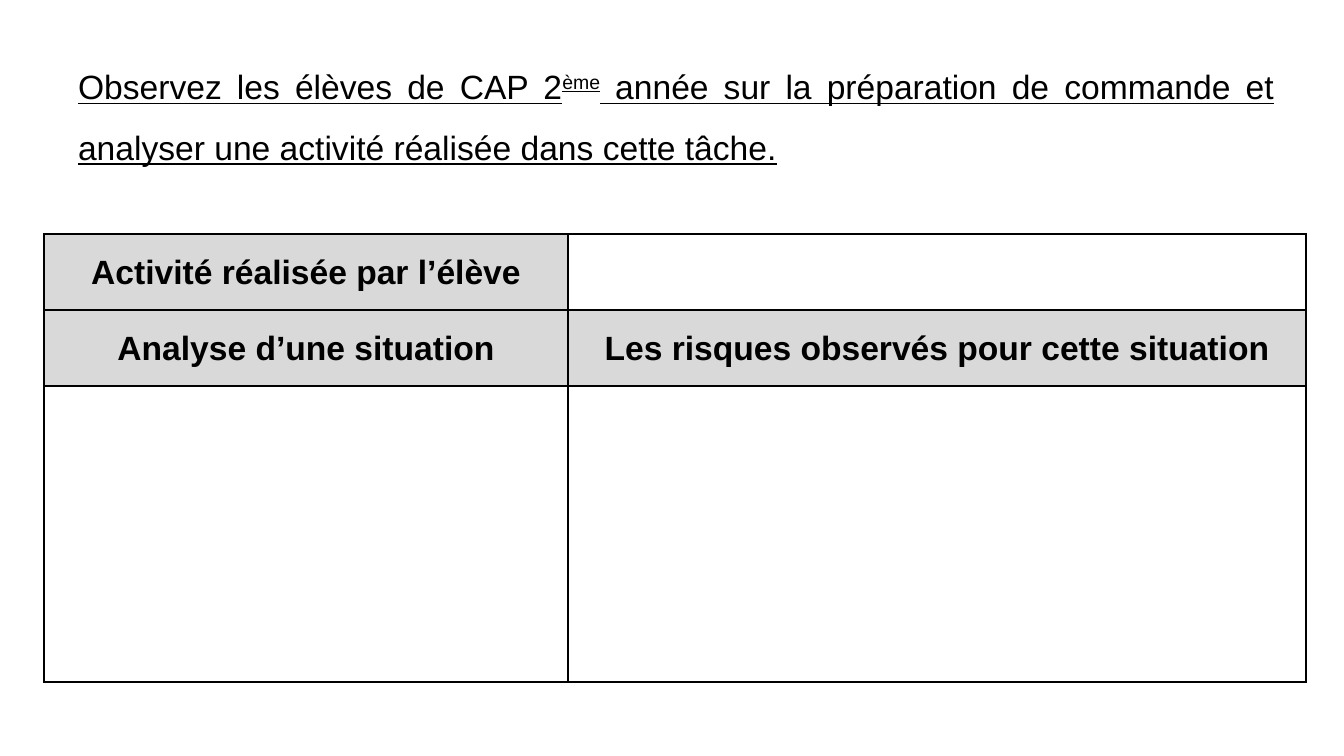
"""Build the worksheet slide on observing a pupil's activity and its risks."""
from lxml import etree
from pptx import Presentation
from pptx import util as u
from pptx.dml.color import RGBColor
from pptx.enum import text
from pptx.oxml.ns import qn

PX = 914400 / 100.8
COLORS = {"ink": "000000", "heading": "D9D9D9"}
INSTRUCTION = [
    ("Observez les élèves de CAP 2", 0),
    ("ème", 30),
    (" année sur la préparation de commande et analyser une activité réalisée dans cette tâche.", 0),
]
HEADINGS = [
    ["Activité réalisée par l’élève", ""],
    ["Analyse d’une situation", "Les risques observés pour cette situation"],
    ["", ""],
]
COLUMN_WIDTHS = [524, 738]
ROW_HEIGHTS = [76, 76, 296]


def px(length):
    return u.Emu(round(length * PX))


def color(name):
    return RGBColor.from_string(COLORS[name])


def write(paragraph, words, bold=False, underline=False, raised=0):
    run = paragraph.add_run()
    run.text = words
    run.font.name = "Arial"
    run.font.size = u.Pt(24)
    run.font.bold = bold
    run.font.underline = underline
    run.font.color.rgb = color("ink")
    if raised:
        run.font._element.set("baseline", str(raised * 1000))


def space(paragraph, align, line_spacing):
    paragraph.alignment = align
    paragraph.line_spacing = line_spacing
    paragraph.space_after = u.Pt(8)


def add_instruction(slide):
    instruction = slide.shapes.title
    instruction.left, instruction.top = px(68), px(41)
    instruction.width, instruction.height = px(1216), px(126)
    frame = instruction.text_frame
    frame.word_wrap = True
    frame.auto_size = text.MSO_AUTO_SIZE.SHAPE_TO_FIT_TEXT
    frame.vertical_anchor = text.MSO_ANCHOR.TOP
    sentence = frame.paragraphs[0]
    space(sentence, text.PP_ALIGN.JUSTIFY, 1.5)
    for words, raised in INSTRUCTION:
        write(sentence, words, underline=True, raised=raised)


def outline(cell):
    properties = cell._tc.get_or_add_tcPr()
    for side in ("a:lnL", "a:lnR", "a:lnT", "a:lnB"):
        border = etree.SubElement(properties, qn(side), w=str(u.Pt(1)))
        fill = etree.SubElement(border, qn("a:solidFill"))
        etree.SubElement(fill, qn("a:srgbClr"), val=COLORS["ink"])


def fill_cell(cell, heading):
    outline(cell)
    if not heading:
        cell.fill.background()
        return
    cell.fill.solid()
    cell.fill.fore_color.rgb = color("heading")
    cell.vertical_anchor = text.MSO_ANCHOR.MIDDLE
    cell.margin_left = cell.margin_right = px(7)
    cell.margin_top = cell.margin_bottom = 0
    label = cell.text_frame.paragraphs[0]
    space(label, text.PP_ALIGN.CENTER, 1.07)
    write(label, heading, bold=True)


def add_worksheet(slide):
    worksheet = slide.shapes.add_table(
        len(ROW_HEIGHTS), len(COLUMN_WIDTHS), px(44), px(234),
        px(sum(COLUMN_WIDTHS)), px(sum(ROW_HEIGHTS))).table
    worksheet.first_row = worksheet.horz_banding = False
    for column, width in zip(worksheet.columns, COLUMN_WIDTHS):
        column.width = px(width)
    for row, height, headings in zip(worksheet.rows, ROW_HEIGHTS, HEADINGS):
        row.height = px(height)
        for cell, heading in zip(row.cells, headings):
            fill_cell(cell, heading)


def main():
    deck = Presentation()
    deck.slide_width, deck.slide_height = px(1344), px(756)
    slide = deck.slides.add_slide(deck.slide_layouts[5])
    add_instruction(slide)
    add_worksheet(slide)
    deck.save("out.pptx")


if __name__ == "__main__":
    main()
